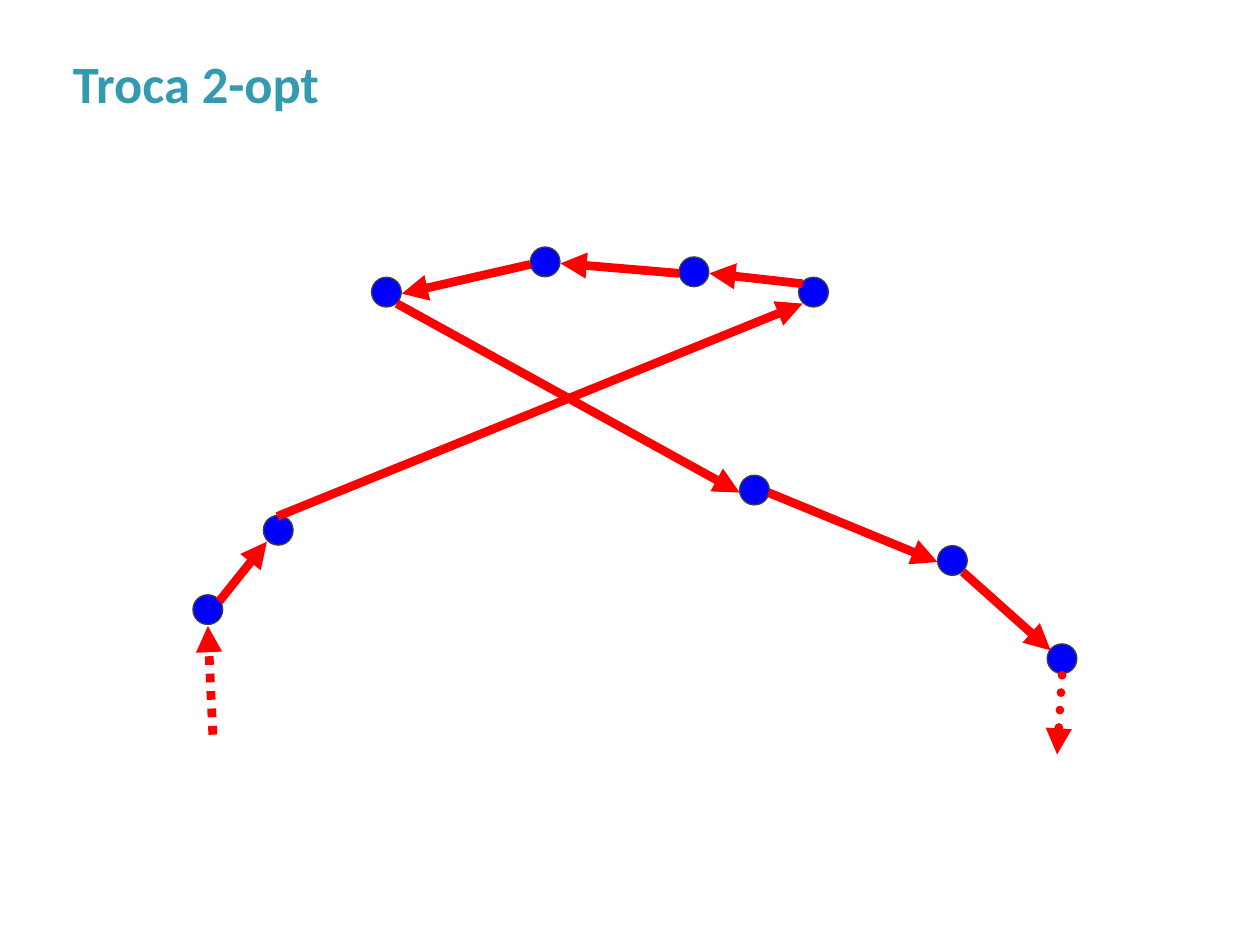
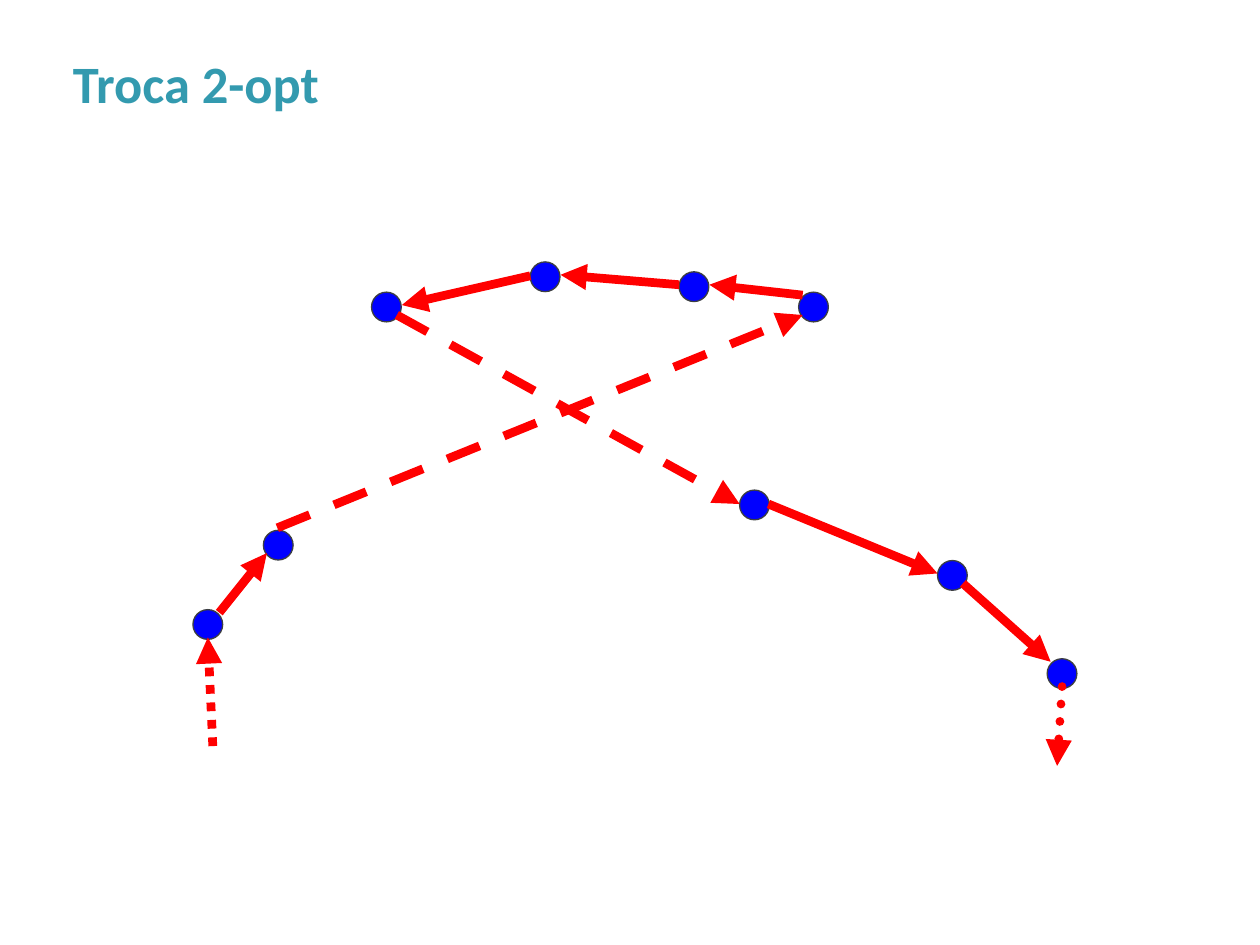
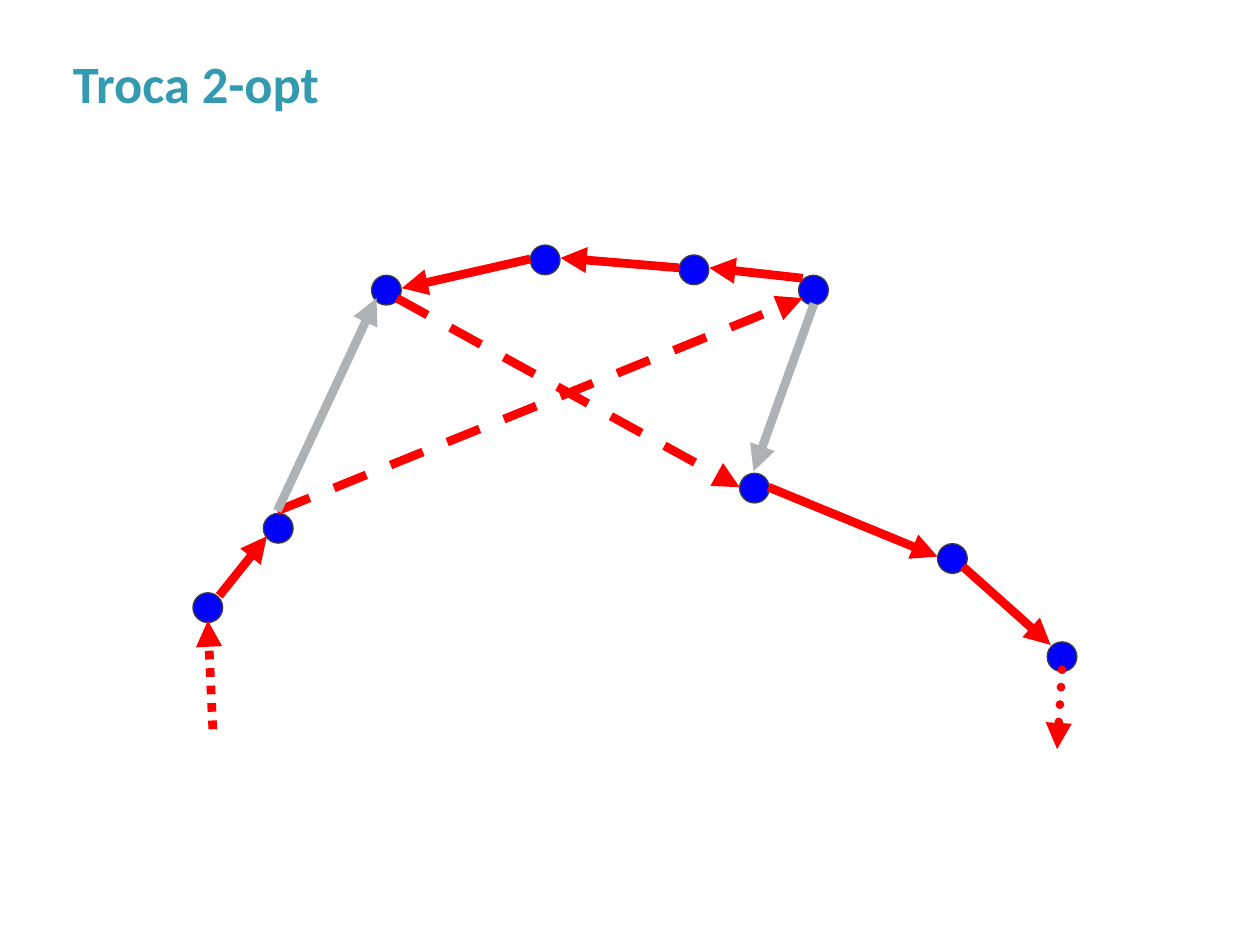
from typing import NamedTuple

from lxml.etree import SubElement
from pptx import Presentation
from pptx.dml.color import RGBColor
from pptx.enum.dml import MSO_LINE
from pptx.enum.shapes import MSO_CONNECTOR, MSO_SHAPE
from pptx.enum.text import MSO_ANCHOR
from pptx.oxml.ns import qn
from pptx.slide import Slide
from pptx.util import Cm, Pt

TEAL, BLUE, DARK, RED, GRAY = "339AAF", "0000FF", "3D3F41", "FF0000", "AFB2B4"
TITLE = "Troca 2-opt"
TITLE_FONT = {"name": "Calibri", "size": Pt(30), "bold": True}
CITY_SIZE = 0.6


class City(NamedTuple):
    left: float
    top: float


class Edge(NamedTuple):
    start_x: float
    start_y: float
    end_x: float
    end_y: float
    color: str = RED
    dash: MSO_LINE | None = None
    round_cap: bool = False


class Step(NamedTuple):
    """One stage of the exchange, with the vertical shift of its drawing."""
    city_shift: float
    edge_shift: float
    edges: list[Edge]


CITIES = [
    City(16.1, 5.59), City(3.89, 11.99), City(7.49, 5.59),
    City(10.69, 4.98), City(13.69, 5.18), City(5.31, 10.39),
    City(14.91, 9.58), City(18.9, 11), City(21.11, 12.98),
]
ENTRY_EDGE = Edge(4.42, 12.12, 5.38, 10.92)
CROSSING_UP = Edge(5.59, 10.41, 16.18, 6.12)
TOP_EDGES = [
    Edge(16.18, 5.72, 14.3, 5.51),
    Edge(13.69, 5.51, 11.3, 5.31),
    Edge(10.69, 5.33, 8.1, 5.92),
]
CROSSING_DOWN = Edge(8, 6.12, 14.91, 9.93)
EXIT_EDGES = [
    Edge(15.49, 9.93, 18.9, 11.33),
    Edge(19.41, 11.53, 21.18, 13.11),
    Edge(4.29, 14.81, 4.19, 12.62, dash=MSO_LINE.ROUND_DOT),
    Edge(21.41, 13.61, 21.31, 15.21, dash=MSO_LINE.ROUND_DOT, round_cap=True),
]
NEW_EDGES = [
    Edge(5.59, 10.41, 7.59, 6.12, GRAY),
    Edge(16.41, 6.23, 15.19, 9.61, GRAY),
]


def tour(crossing_dash: MSO_LINE | None = None) -> list[Edge]:
    return [
        ENTRY_EDGE,
        CROSSING_UP._replace(dash=crossing_dash),
        *TOP_EDGES,
        CROSSING_DOWN._replace(dash=crossing_dash),
        *EXIT_EDGES,
    ]


STEPS = [
    Step(0, 0, tour()),
    Step(0.3, 0.23, tour(MSO_LINE.DASH)),
    Step(-0.04, -0.11, tour(MSO_LINE.DASH) + NEW_EDGES),
]


def rgb(color: str) -> RGBColor:
    return RGBColor.from_string(color)


def add_title(slide: Slide) -> None:
    box = slide.shapes.add_textbox(Cm(1.22), Cm(0.76), Cm(22.99), Cm(1.96))
    frame = box.text_frame
    frame.word_wrap = True
    frame.vertical_anchor = MSO_ANCHOR.MIDDLE
    paragraph = frame.paragraphs[0]
    paragraph.line_spacing = 0.9
    run = paragraph.add_run()
    run.text = TITLE
    for attribute, value in TITLE_FONT.items():
        setattr(run.font, attribute, value)
    run.font.color.rgb = rgb(TEAL)


def add_city(slide: Slide, city: City, shift: float) -> None:
    shape = slide.shapes.add_shape(
        MSO_SHAPE.OVAL, Cm(city.left), Cm(city.top + shift),
        Cm(CITY_SIZE), Cm(CITY_SIZE))
    shape.shadow.inherit = False
    shape.fill.solid()
    shape.fill.fore_color.rgb = rgb(BLUE)
    shape.line.color.rgb = rgb(DARK)
    shape.line.width = Pt(0.75)


def add_edge(slide: Slide, edge: Edge, shift: float) -> None:
    connector = slide.shapes.add_connector(
        MSO_CONNECTOR.STRAIGHT, Cm(edge.start_x), Cm(edge.start_y + shift),
        Cm(edge.end_x), Cm(edge.end_y + shift))
    connector.line.color.rgb = rgb(edge.color)
    connector.line.width = Pt(5)
    if edge.dash is not None:
        connector.line.dash_style = edge.dash
    properties = connector.element.spPr
    outline = properties.find(qn("a:ln"))
    if edge.round_cap:
        outline.set("cap", "rnd")
    SubElement(outline, qn("a:tailEnd"), type="triangle")
    SubElement(properties, qn("a:effectLst"))


def main() -> None:
    presentation = Presentation()
    presentation.slide_width = Cm(25.4)
    presentation.slide_height = Cm(19.05)
    blank_layout = presentation.slide_layouts[6]
    for step in STEPS:
        slide = presentation.slides.add_slide(blank_layout)
        add_title(slide)
        for city in CITIES:
            add_city(slide, city, step.city_shift)
        for edge in step.edges:
            add_edge(slide, edge, step.edge_shift)
    presentation.save("out.pptx")


if __name__ == "__main__":
    main()
